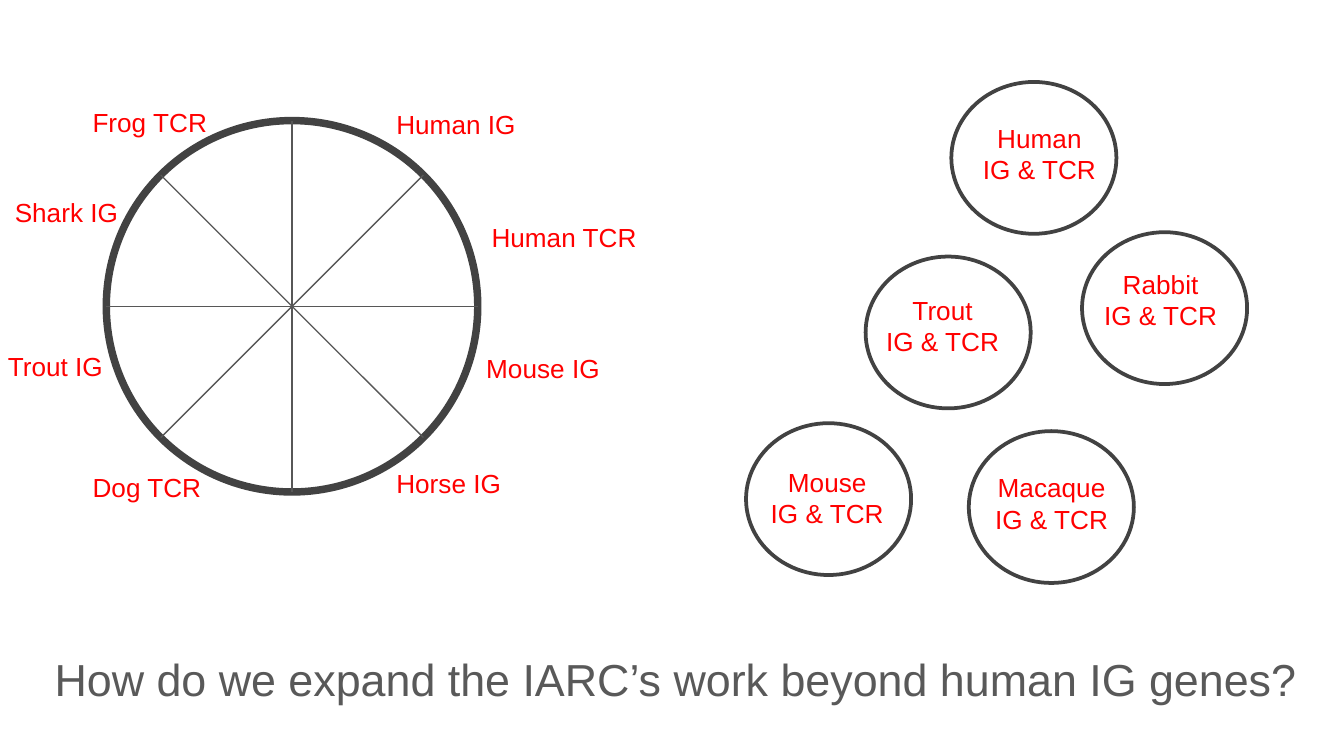
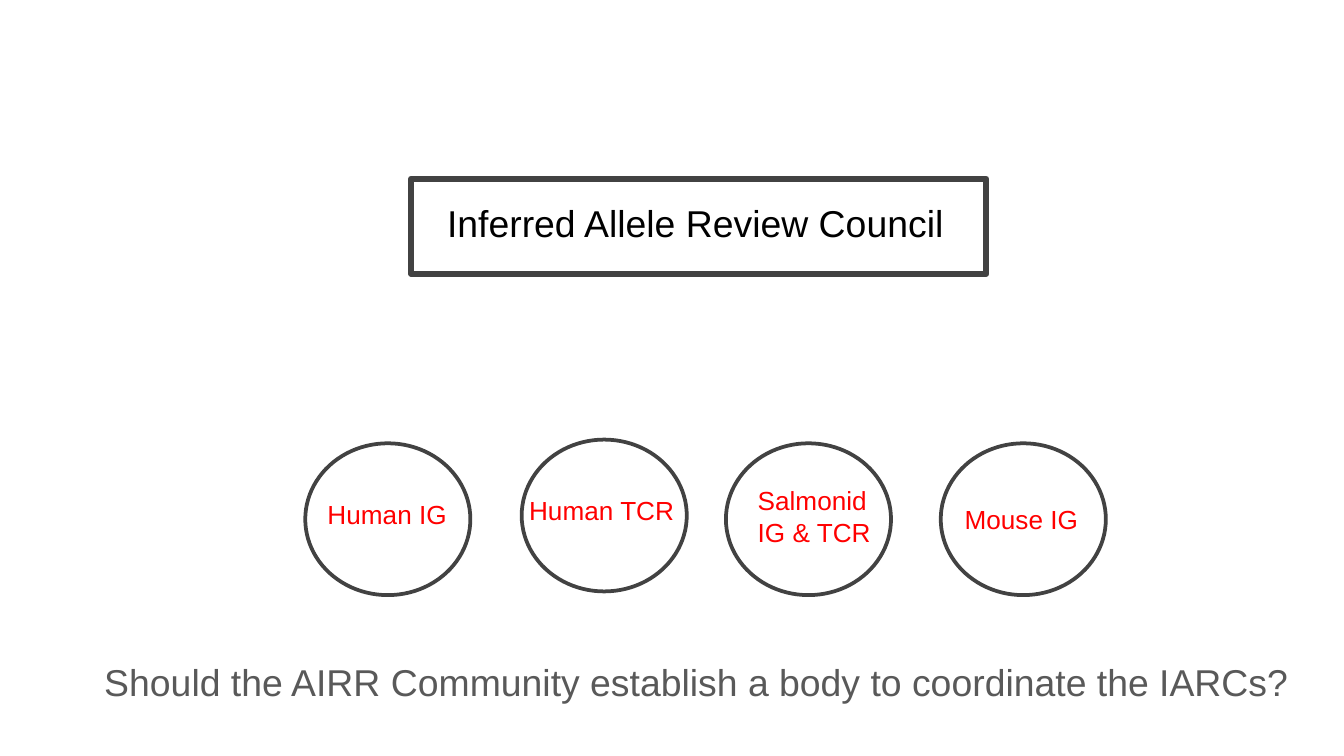
from math import cos, pi, sin

from lxml.etree import SubElement
from pptx import Presentation
from pptx.dml.color import RGBColor
from pptx.enum.shapes import MSO_CONNECTOR, MSO_SHAPE
from pptx.enum.text import MSO_ANCHOR, MSO_AUTO_SIZE, PP_ALIGN
from pptx.oxml.ns import qn
from pptx.util import Cm, Pt

FONT = "Arial"
RED = RGBColor(0xFF, 0x00, 0x00)
BLACK = RGBColor(0x00, 0x00, 0x00)
OUTLINE = RGBColor(0x42, 0x42, 0x42)
SPOKE = RGBColor(0x57, 0x57, 0x57)
QUESTION = RGBColor(0x59, 0x59, 0x59)

# All places and sizes are in centimetres.
CIRCLE_SIZE = (3.12, 2.87)
WHEEL_CENTRE, WHEEL_RADIUS, SPOKES = (5.52, 5.79), 3.51, 4

# Question: text, (left, top, width, height), points, hanging indent
EXPAND = ("How do we expand the IARC’s work beyond human IG genes?",
          (0.15, 12.19, 25.25, 1.27), 24, 0.64)
COORDINATE = ("Should the AIRR Community establish a body to coordinate the IARCs?",
              (0.48, 12.24, 24.33, 1.27), 20, 0.03)

# Label: text, (left, top, width)
WHEEL_LABELS = [
    ("Human IG", (7.24, 1.93, 2.77)),
    ("Human TCR", (9.04, 4.06, 3.28)),
    ("Mouse IG", (8.94, 6.53, 2.67)),
    ("Horse IG", (7.24, 8.71, 2.51)),
    ("Dog TCR", (1.5, 8.79, 2.59)),
    ("Trout IG", (-0.1, 6.5, 2.34)),
    ("Shark IG", (0.03, 3.58, 2.49)),
    ("Frog TCR", (1.5, 1.88, 2.69)),
]

# Group: text, circle (left, top), label (left, top, width)
SPECIES = [
    ("Human\nIG & TCR", (17.98, 1.55), (18.31, 2.18, 2.67)),
    ("Trout\nIG & TCR", (16.36, 4.85), (16.38, 5.44, 2.87)),
    ("Rabbit\nIG & TCR", (20.45, 4.39), (20.5, 4.95, 2.87)),
    ("Macaque\nIG & TCR", (18.31, 8.15), (18.44, 8.79, 2.87)),
    ("Mouse\nIG & TCR", (14.1, 8.0), (14.2, 8.69, 2.87)),
]
COMMITTEES = [
    ("Human IG", (5.77, 8.38), (5.94, 9.3, 2.77)),
    ("Human TCR", (9.86, 8.31), (9.75, 9.22, 3.28)),
    ("Salmonid\nIG & TCR", (13.72, 8.38), (14.07, 9.04, 2.72)),
    ("Mouse IG", (17.78, 8.38), (17.98, 9.4, 2.67)),
]
COUNCIL = "Inferred Allele Review Council"
COUNCIL_BOX = (7.77, 3.38, 10.87, 1.8)
COUNCIL_LABEL = (8.2, 3.66, 10.03)


def cm(values):
    return [Cm(v) for v in values]


def style(tf, size, color, align=PP_ALIGN.LEFT):
    for p in tf.paragraphs:
        p.alignment = align
        p.font.name = FONT
        p.font.size = Pt(size)
        p.font.color.rgb = color


def add_question_slide(prs, text, box, size, hanging):
    """Add a slide whose title is the question at its foot."""
    slide = prs.slides.add_slide(prs.slide_layouts[5])
    title = slide.shapes.title
    title.left, title.top, title.width, title.height = cm(box)
    tf = title.text_frame
    tf.text = text
    tf.word_wrap = True
    tf.auto_size = MSO_AUTO_SIZE.NONE
    tf.vertical_anchor = MSO_ANCHOR.MIDDLE
    tf.margin_left = tf.margin_right = tf.margin_top = tf.margin_bottom = Cm(0.25)
    style(tf, size, QUESTION)
    pPr = tf.paragraphs[0]._p.get_or_add_pPr()
    pPr.set("marL", str(Cm(1.27)))
    pPr.set("indent", str(-Cm(hanging)))
    return slide


def add_outline(slide, kind, box, weight):
    sp = slide.shapes.add_shape(kind, *cm(box))
    sp.shadow.inherit = False
    sp.fill.background()
    sp.line.color.rgb = OUTLINE
    sp.line.width = Pt(weight)


def add_label(slide, text, place, size=14, color=RED, align=PP_ALIGN.LEFT):
    height = size * 0.043 * (text.count("\n") + 1) + 0.25
    tf = slide.shapes.add_textbox(*cm((*place, height))).text_frame
    tf.text = text
    tf.word_wrap = False
    tf.auto_size = MSO_AUTO_SIZE.SHAPE_TO_FIT_TEXT
    style(tf, size, color, align)


def add_groups(slide, groups, align):
    for _, corner, _ in groups:
        add_outline(slide, MSO_SHAPE.OVAL, (*corner, *CIRCLE_SIZE), 2)
    for text, _, place in groups:
        add_label(slide, text, place, align=align)


def add_wheel(slide):
    (x, y), radius = WHEEL_CENTRE, WHEEL_RADIUS
    add_outline(slide, MSO_SHAPE.OVAL,
                (x - radius, y - radius, 2 * radius, 2 * radius), 4)
    for i in range(SPOKES):
        dx, dy = radius * cos(i * pi / SPOKES), radius * sin(i * pi / SPOKES)
        line = slide.shapes.add_connector(
            MSO_CONNECTOR.STRAIGHT, *cm((x - dx, y - dy, x + dx, y + dy)))
        line.line.color.rgb = SPOKE
        line.line.width = Pt(0.75)
        SubElement(line._element.spPr, qn("a:effectLst"))
    for text, place in WHEEL_LABELS:
        add_label(slide, text, place)


def main():
    prs = Presentation()
    prs.slide_width, prs.slide_height = Cm(25.4), Cm(14.29)

    slide = add_question_slide(prs, *EXPAND)
    add_wheel(slide)
    add_groups(slide, SPECIES, PP_ALIGN.CENTER)

    slide = add_question_slide(prs, *COORDINATE)
    add_groups(slide, COMMITTEES, PP_ALIGN.LEFT)
    add_outline(slide, MSO_SHAPE.RECTANGLE, COUNCIL_BOX, 3.25)
    add_label(slide, COUNCIL, COUNCIL_LABEL, 20, BLACK)

    prs.save("out.pptx")


if __name__ == "__main__":
    main()
